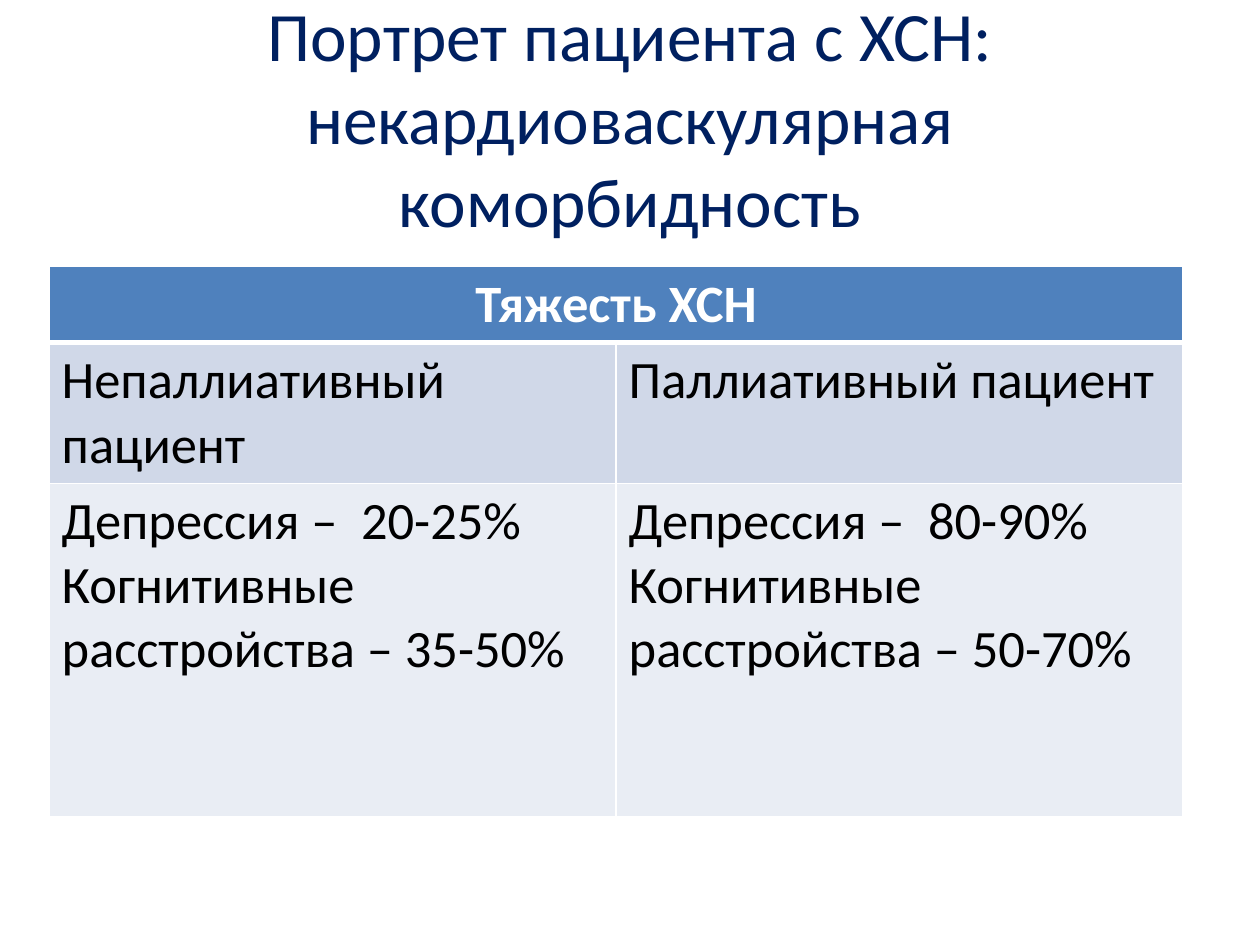
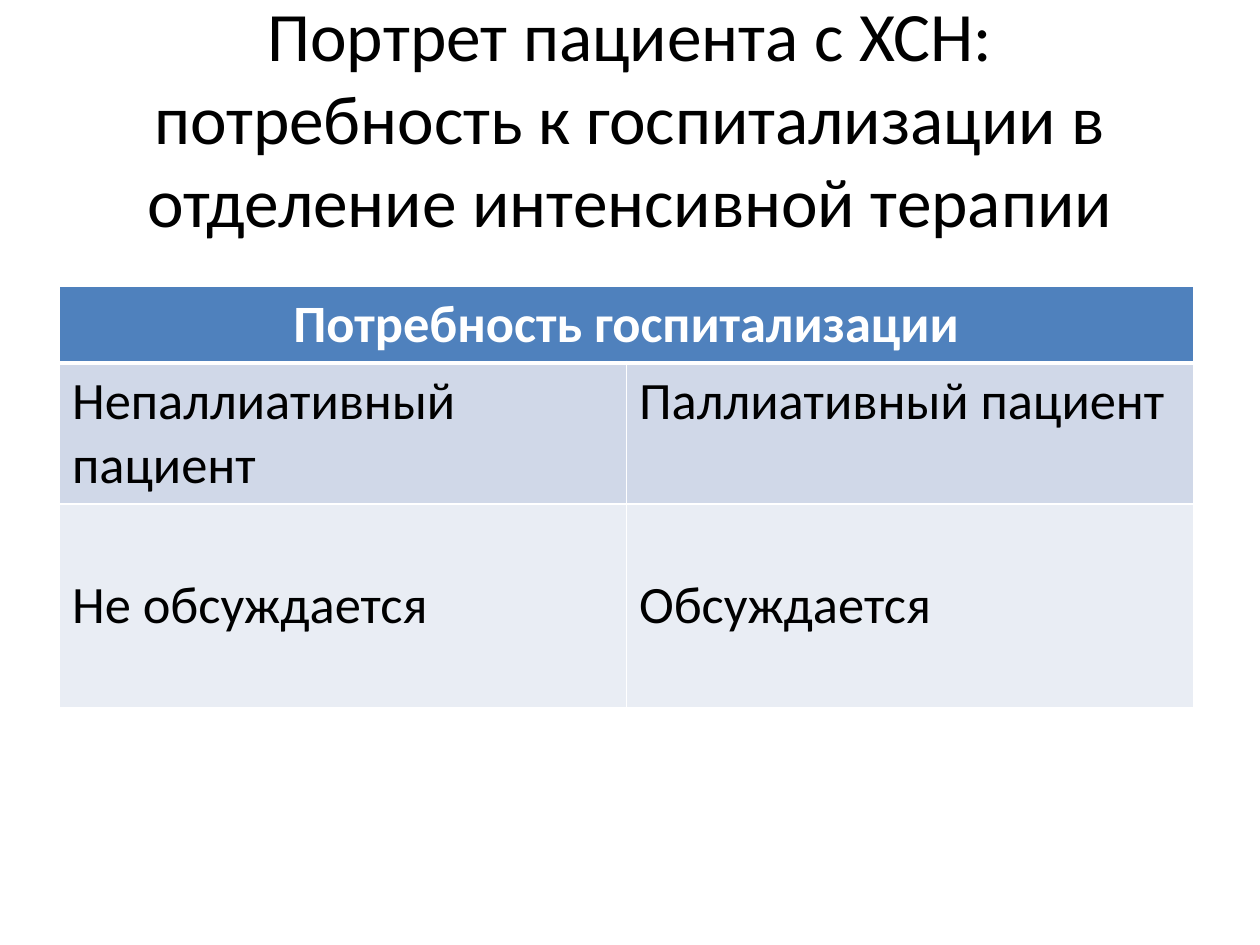
"""Build two slides that compare non-palliative and palliative patients with heart failure."""
from dataclasses import dataclass

from lxml import etree
from pptx import Presentation
from pptx.dml.color import RGBColor
from pptx.enum.text import MSO_ANCHOR, MSO_AUTO_SIZE, PP_ALIGN
from pptx.oxml.ns import qn
from pptx.util import Cm, Pt

CENTER, LEFT = PP_ALIGN.CENTER, PP_ALIGN.LEFT
TOP, MIDDLE = MSO_ANCHOR.TOP, MSO_ANCHOR.MIDDLE
NO_FIT = MSO_AUTO_SIZE.NONE
TITLE_ONLY = 5

FONT = "Calibri"
NAVY, BLACK, WHITE = "002060", "000000", "FFFFFF"
FILLS = ("4F81BD", "D0D8E8", "E9EDF4")
GROUPS = ("Непаллиативный пациент", "Паллиативный пациент")
COL, HEAD, GROUP = 11.43, 1.54, 2.83
THIN, THICK = 1, 3


@dataclass(frozen=True)
class Page:
    title: str
    color: str
    left: float
    top: float
    head: str
    facts: tuple[str, str]
    depth: float
    anchor: MSO_ANCHOR


PAGES = (
    Page(
        "Портрет пациента с ХСН: некардиоваскулярная коморбидность",
        NAVY, 0.99, 5.36, "Тяжесть ХСН",
        (
            "Депрессия –  20-25%\nКогнитивные расстройства – 35-50%",
            "Депрессия –  80-90%\nКогнитивные расстройства – 50-70%",
        ),
        6.71, TOP,
    ),
    Page(
        "Портрет пациента с ХСН: потребность к госпитализации в отделение интенсивной терапии",
        BLACK, 1.2, 5.77, "Потребность госпитализации",
        ("Не обсуждается", "Обсуждается"),
        4.11, MIDDLE,
    ),
)


def rgb(code: str) -> RGBColor:
    return RGBColor.from_string(code)


def style(frame, size: float, color: str, bold: bool, align: PP_ALIGN) -> None:
    for para in frame.paragraphs:
        para.alignment = align
        for run in para.runs:
            font = run.font
            font.name, font.size, font.bold = FONT, Pt(size), bold
            font.color.rgb = rgb(color)


def border(cell, row: int) -> None:
    props = cell._tc.get_or_add_tcPr()
    widths = {
        "a:lnL": THIN,
        "a:lnR": THIN,
        "a:lnT": THICK if row == 1 else THIN,
        "a:lnB": THICK if row == 0 else THIN,
    }
    for tag, width in widths.items():
        line = etree.SubElement(props, qn(tag), w=str(Pt(width)))
        fill = etree.SubElement(line, qn("a:solidFill"))
        etree.SubElement(fill, qn("a:srgbClr"), val=WHITE)


def add_title(slide, page: Page) -> None:
    title = slide.shapes.title
    title.left, title.top = Cm(1.27), Cm(0.76)
    title.width, title.height = Cm(22.86), Cm(3.18)
    frame = title.text_frame
    frame.text = page.title
    frame.word_wrap, frame.auto_size = True, NO_FIT
    frame.vertical_anchor = MIDDLE
    style(frame, 39.6, page.color, False, CENTER)


def add_grid(slide, page: Page) -> None:
    rows = ((page.head, ""), GROUPS, page.facts)
    depths = (HEAD, GROUP, page.depth)
    table = slide.shapes.add_table(
        len(rows), 2, Cm(page.left), Cm(page.top), Cm(2 * COL), Cm(sum(depths))
    ).table
    table.horz_banding = False
    for col in table.columns:
        col.width = Cm(COL)
    table.cell(0, 0).merge(table.cell(0, 1))
    for row, (texts, depth) in enumerate(zip(rows, depths)):
        table.rows[row].height = Cm(depth)
        top = row == 0
        for col, text in enumerate(texts):
            cell = table.cell(row, col)
            border(cell, row)
            cell.fill.solid()
            cell.fill.fore_color.rgb = rgb(FILLS[row])
            cell.vertical_anchor = page.anchor if row == 2 else TOP
            cell.text_frame.text = text
            style(cell.text_frame, 30, WHITE if top else BLACK, top, CENTER if top else LEFT)


def main() -> None:
    deck = Presentation()
    deck.slide_width, deck.slide_height = Cm(25.4), Cm(19.05)
    for page in PAGES:
        slide = deck.slides.add_slide(deck.slide_layouts[TITLE_ONLY])
        add_title(slide, page)
        add_grid(slide, page)
    deck.save("out.pptx")


if __name__ == "__main__":
    main()
